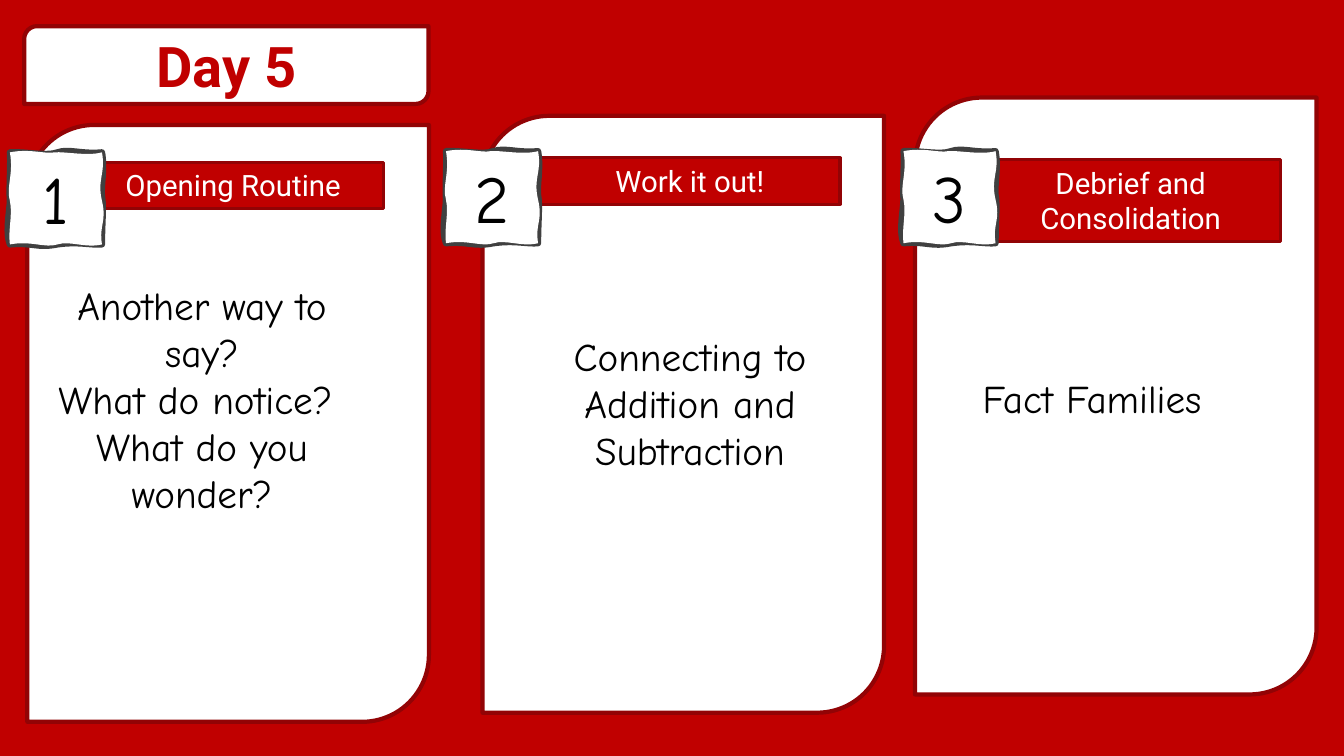
"""Build the Day 5 lesson plan slide with three numbered activity cards."""
from lxml import etree
from pptx import Presentation
from pptx import util as u
from pptx.dml.color import RGBColor
from pptx.enum import shapes, text
from pptx.oxml import ns

COLORS = {"red": "C00000", "edge": "920305", "white": "FFFFFF",
          "ink": "000000", "sketch": "404040"}
HEADING_FONT, BODY_FONT = "Roboto", "Comic Neue"
DAY, DAY_BOX = "Day 5", (0.61, 0.66, 10.19, 1.96)
CARD_SIZE, BAND_WIDTH, BODY_WIDTH = (10.12, 15.04), 7.57, 8.1

ACTIVITIES = [
    {"heading": "Opening Routine",
     "body": ["Another way to say?", "What do notice?  What do you wonder?"],
     "card": (0.69, 3.15), "band": (2.09, 4.09, 1.17),
     "badge": (0.25, 3.84), "body_at": (1.04, 6.92, 6.25)},
    {"heading": "Work it out!",
     "body": ["Connecting to Addition and Subtraction"],
     "card": (12.16, 2.92), "band": (13.6, 3.98, 1.17),
     "badge": (11.24, 3.81), "body_at": (13.34, 8.23, 3.84)},
    {"heading": "Debrief and Consolidation",
     "body": ["Fact Families"],
     "card": (23.06, 2.46), "band": (24.71, 4.03, 2.06),
     "badge": (22.77, 3.81), "body_at": (23.47, 9.3, 1.45)},
]

BADGE_SIDE, BADGE_UNITS, FINENESS = 2.32, 91, 1000
BADGE_EDGE = [
    ((14, -1), (37, 4), (47, 0)), ((58, -4), (71, 2), (91, 0)),
    ((94, 15), (90, 34), (91, 43)), ((93, 53), (91, 70), (91, 91)),
    ((80, 92), (68, 88), (47, 91)), ((27, 95), (23, 89), (0, 91)),
    ((-5, 79), (0, 57), (0, 47)), ((-1, 37), (1, 10), (0, 0)),
]
BADGE_FACE = [
    ((20, -4), (35, 2), (44, 0)), ((54, -1), (77, 4), (91, 0)),
    ((95, 21), (86, 26), (91, 48)), ((96, 69), (88, 71), (91, 91)),
    ((75, 95), (59, 87), (47, 91)), ((35, 95), (21, 87), (0, 91)),
    ((-2, 76), (3, 62), (0, 48)), ((-4, 34), (4, 22), (0, 0)),
]


def rgb(name):
    return RGBColor.from_string(COLORS[name])


def paint(part, fill, line, width):
    part.shadow.inherit = False
    part.fill.solid()
    part.fill.fore_color.rgb = rgb(fill)
    part.line.color.rgb = rgb(line)
    part.line.width = u.Pt(width)


def write(part, paragraphs, font, size, color, bold=False, grow=True, middle=False):
    frame = part.text_frame
    frame.word_wrap = True
    fit = text.MSO_AUTO_SIZE
    frame.auto_size = fit.SHAPE_TO_FIT_TEXT if grow else fit.NONE
    anchor = text.MSO_ANCHOR
    frame.vertical_anchor = anchor.MIDDLE if middle else anchor.TOP
    for index, words in enumerate(paragraphs):
        paragraph = frame.add_paragraph() if index else frame.paragraphs[0]
        paragraph.alignment = text.PP_ALIGN.CENTER
        run = paragraph.add_run()
        run.text = words
        run.font.name, run.font.size, run.font.bold = font, u.Pt(size), bold
        run.font.color.rgb = rgb(color)


def add_box(slide, preset, box, fill="white", width=3):
    part = slide.shapes.add_shape(preset, *map(u.Cm, box))
    paint(part, fill, "edge", width)
    return part


def add_point(parent, point):
    x, y = (str(value * FINENESS) for value in point)
    etree.SubElement(parent, ns.qn("a:pt"), x=x, y=y)


def add_curves(outlines, curves, **drawing):
    side = str(BADGE_UNITS * FINENESS)
    outline = etree.SubElement(outlines, ns.qn("a:path"), w=side, h=side, **drawing)
    add_point(etree.SubElement(outline, ns.qn("a:moveTo")), (0, 0))
    for curve in curves:
        bend = etree.SubElement(outline, ns.qn("a:cubicBezTo"))
        for point in curve:
            add_point(bend, point)
    etree.SubElement(outline, ns.qn("a:close"))


def add_badge(slide, at):
    builder = slide.shapes.build_freeform(0, 0, u.Cm(BADGE_SIDE))
    builder.add_line_segments([(1, 0), (1, 1), (0, 1)], close=True)
    badge = builder.convert_to_shape(*map(u.Cm, at))
    outlines = next(badge.element.iter(ns.qn("a:pathLst")))
    for square in list(outlines):
        outlines.remove(square)
    add_curves(outlines, BADGE_EDGE, fill="none")
    add_curves(outlines, BADGE_FACE, stroke="0")
    paint(badge, "white", "sketch", 4.5)
    return badge


def add_activity(slide, number, activity):
    preset = shapes.MSO_SHAPE
    add_box(slide, preset.ROUND_2_DIAG_RECTANGLE, activity["card"] + CARD_SIZE)

    left, top, height = activity["band"]
    band = add_box(slide, preset.RECTANGLE, (left, top, BAND_WIDTH, height),
                   fill="red", width=2.25)
    write(band, [activity["heading"]], HEADING_FONT, 21, "white")

    badge = add_badge(slide, activity["badge"])
    write(badge, [str(number)], BODY_FONT, 48, "ink")

    left, top, height = activity["body_at"]
    body = slide.shapes.add_textbox(*map(u.Cm, (left, top, BODY_WIDTH, height)))
    write(body, activity["body"], BODY_FONT, 28, "ink", middle=True)


def main():
    deck = Presentation()
    deck.slide_width, deck.slide_height = u.Cm(33.87), u.Cm(19.05)
    slide = deck.slides.add_slide(deck.slide_layouts[6])
    slide.background.fill.solid()
    slide.background.fill.fore_color.rgb = rgb("red")
    day = add_box(slide, shapes.MSO_SHAPE.ROUND_2_DIAG_RECTANGLE, DAY_BOX)
    write(day, [DAY], HEADING_FONT, 40, "red", bold=True, grow=False, middle=True)
    for number, activity in enumerate(ACTIVITIES, start=1):
        add_activity(slide, number, activity)
    deck.save("out.pptx")


if __name__ == "__main__":
    main()
